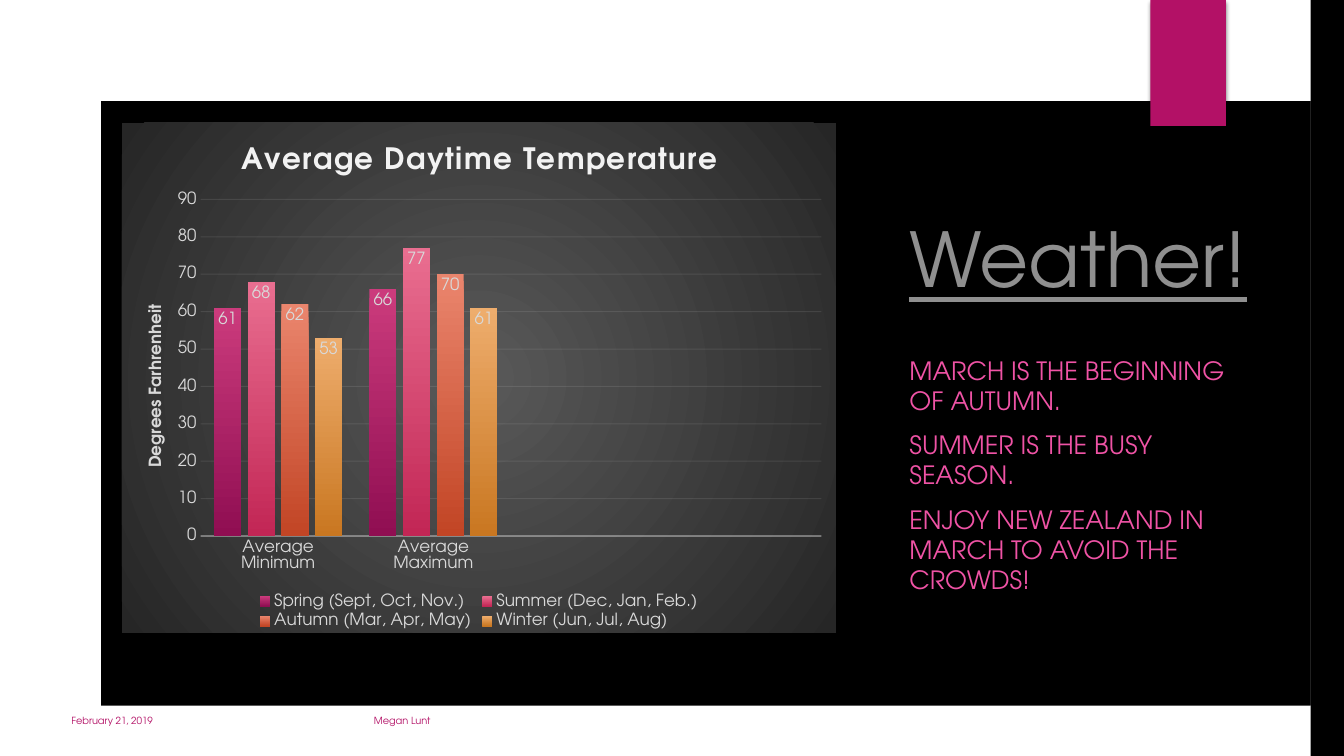
from lxml.etree import SubElement
from pptx import Presentation
from pptx.chart.data import CategoryChartData
from pptx.dml.color import RGBColor
from pptx.enum.chart import XL_CHART_TYPE, XL_LABEL_POSITION, XL_LEGEND_POSITION, XL_TICK_MARK
from pptx.enum.shapes import MSO_SHAPE
from pptx.enum.text import MSO_ANCHOR, MSO_AUTO_SIZE, PP_ALIGN
from pptx.oxml import parse_xml
from pptx.oxml.ns import nsdecls, qn
from pptx.util import Inches, Pt

FONT = "TeX Gyre Adventor"
COLORS = {
    "background": "000000", "frame": "FFFFFF", "accent": "B31166",
    "title": "8F8F8F", "body": "EF53A5", "chart_title": "F2F2F2",
    "label": "D9D9D9", "line": "F2F2F2", "center": "595959", "edge": "262626",
}


def write(paragraph, text, size, color, bold=False, underline=False, spacing=0):
    run = paragraph.add_run()
    run.text = text
    font = run.font
    font.name, font.size, font.bold, font.underline = FONT, Pt(size), bold, underline
    font.color.rgb = RGBColor.from_string(COLORS[color])
    if spacing:
        run._r.get_or_add_rPr().set("spc", str(spacing * 100))


def set_layout(element, **settings):
    """Place a chart part by fractions of the chart area."""
    for old_layout in element.findall(qn("c:layout")):
        element.remove(old_layout)
    layout = parse_xml(f'<c:layout {nsdecls("c")}><c:manualLayout/></c:layout>')
    for name, value in settings.items():
        SubElement(layout[0], qn(f"c:{name}")).set("val", str(value))
    element.insert(0 if element.find(qn("c:tx")) is None else 1, layout)


presentation = Presentation()
presentation.slide_width, presentation.slide_height = Inches(13.33), Inches(7.5)
slide = presentation.slides.add_slide(presentation.slide_layouts[0])
slide.background.fill.solid()
slide.background.fill.fore_color.rgb = RGBColor.from_string(COLORS["background"])

# White frame around the black area
builder = slide.shapes.build_freeform(0, 0, scale=Inches(1))
builder.add_line_segments([(0, 7.5), (13.33, 7.5), (13.33, 0)])
builder.move_to(12.81, 6.98)
builder.add_line_segments([(12.81, 0.52), (0.52, 0.52), (0.52, 6.98)][::-1])
frame = builder.convert_to_shape()

# Accent tab at the top
tab = slide.shapes.add_shape(MSO_SHAPE.RECTANGLE, Inches(11.41), 0, Inches(0.75), Inches(1.25))
for shape, color in ((frame, "frame"), (tab, "accent")):
    shape.shadow.inherit = False
    shape.fill.solid()
    shape.fill.fore_color.rgb = RGBColor.from_string(COLORS[color])
    shape.line.fill.background()
tab_effects = tab._element.spPr.find(qn("a:effectLst"))
tab_effects.append(parse_xml(
    f'<a:outerShdw {nsdecls("a")} blurRad="{Pt(3)}" dist="{Pt(2)}" dir="5400000" rotWithShape="0">'
    '<a:srgbClr val="000000"><a:alpha val="45000"/></a:srgbClr></a:outerShdw>'))

# Title and body text
title, body = slide.shapes.title, slide.placeholders[1]
for shape, top, height, anchor in ((title, 1.22, 1.83, MSO_ANCHOR.BOTTOM),
                                   (body, 3.47, 2.81, MSO_ANCHOR.TOP)):
    shape.left, shape.top = Inches(8.92), Inches(top)
    shape.width, shape.height = Inches(3.7), Inches(height)
    shape.text_frame.word_wrap = True
    shape.text_frame.auto_size = MSO_AUTO_SIZE.NONE
    shape.text_frame.vertical_anchor = anchor
title.text_frame.paragraphs[0].alignment = PP_ALIGN.LEFT
write(title.text_frame.paragraphs[0], "Weather!", size=54, color="title", underline=True)

facts = ["MARCH IS THE BEGINNING OF AUTUMN.",
         "SUMMER IS THE BUSY SEASON.",
         "ENJOY NEW ZEALAND IN MARCH TO AVOID THE CROWDS!"]
for index, fact in enumerate(facts):
    paragraph = body.text_frame.add_paragraph() if index else body.text_frame.paragraphs[0]
    paragraph.alignment = PP_ALIGN.LEFT
    paragraph.space_before = Pt(10 if index else 0)
    write(paragraph, fact, size=18, color="body")

# Footer with date and author
footer = slide.shapes.add_textbox(Inches(0.61), Inches(6.99), Inches(4.22), Inches(0.33))
footer.text_frame.word_wrap = True
footer.text_frame.vertical_anchor = MSO_ANCHOR.MIDDLE
paragraph = footer.text_frame.paragraphs[0]
tab_list = SubElement(paragraph._p.get_or_add_pPr(), qn("a:tabLst"))
SubElement(tab_list, qn("a:tab"), pos=str(Inches(3)), algn="l")
paragraph.line_spacing = 0.9
write(paragraph, "February 21, 2019\tMegan Lunt", size=7, color="accent")

# Temperature chart: name, values, gradient from top to bottom
seasons = [
    ("Spring (Sept, Oct, Nov.)", (61, 66), ("CB3B7C", "900E52")),
    ("Summer (Dec, Jan, Feb.)", (68, 77), ("E96E90", "C22655")),
    ("Autumn (Mar, Apr, May)", (62, 70), ("EA856D", "C24525")),
    ("Winter (Jun, Jul, Aug)", (53, 61), ("EEAD6D", "C97721")),
]
chart_data = CategoryChartData()
chart_data.categories = ["Average Minimum", "Average Maximum", "", ""]
for name, values, _ in seasons:
    chart_data.add_series(name, (*values, None, None))
chart = slide.shapes.add_chart(XL_CHART_TYPE.COLUMN_CLUSTERED, Inches(1.21), Inches(1.22),
                               Inches(7.08), Inches(5.06), chart_data).chart
chart.font.name, chart.font.size = FONT, Pt(12)
chart.font.color.rgb = RGBColor.from_string(COLORS["label"])
chart.element.find(qn("c:chart")).addnext(parse_xml(
    f'<c:spPr {nsdecls("c", "a")}><a:gradFill><a:gsLst>'
    f'<a:gs pos="0"><a:srgbClr val="{COLORS["center"]}"/></a:gs>'
    f'<a:gs pos="100000"><a:srgbClr val="{COLORS["edge"]}"/></a:gs></a:gsLst>'
    '<a:path path="circle"><a:fillToRect l="50000" t="50000" r="50000" b="50000"/></a:path>'
    '</a:gradFill><a:ln><a:noFill/></a:ln></c:spPr>'))

# Columns and value labels
plot = chart.plots[0]
plot.gap_width, plot.overlap, plot.vary_by_categories = 100, -24, False
for series, (_, _, gradient) in zip(plot.series, seasons):
    fill = series.format.fill
    fill.gradient()
    fill.gradient_angle = 270
    for stop, color in zip(fill.gradient_stops, gradient):
        stop.color.rgb = RGBColor.from_string(color)
    labels = series.data_labels
    labels.show_value = True
    labels.position = XL_LABEL_POSITION.INSIDE_END
    labels.font.name, labels.font.size = FONT, Pt(12)
    labels.font.color.rgb = RGBColor.from_string(COLORS["label"])

# Axes and gridlines
category_axis, value_axis = chart.category_axis, chart.value_axis
for axis in (category_axis, value_axis):
    axis.major_tick_mark = axis.minor_tick_mark = XL_TICK_MARK.NONE
value_axis.minimum_scale, value_axis.maximum_scale, value_axis.major_unit = 0, 90, 10
value_axis.format.line.fill.background()
for line, width, opacity in ((category_axis.format.line, 1, 54),
                             (value_axis.major_gridlines.format.line, 0.75, 10)):
    line.width = Pt(width)
    line.color.rgb = RGBColor.from_string(COLORS["line"])
    color_element = line._get_or_add_ln().find(".//" + qn("a:srgbClr"))
    SubElement(color_element, qn("a:alpha"), val=str(opacity * 1000))

# Chart titles, legend and plot area
write(chart.chart_title.text_frame.paragraphs[0], "Average Daytime Temperature",
      size=21, color="chart_title", bold=True, spacing=1)
write(value_axis.axis_title.text_frame.paragraphs[0], "Degrees Farhrenheit",
      size=12, color="label", bold=True)
value_axis.axis_title.text_frame._txBody.bodyPr.set("rot", "-5400000")
chart.has_legend = True
chart.legend.position = XL_LEGEND_POSITION.BOTTOM
chart.legend.include_in_layout = False
set_layout(chart.chart_title._element, xMode="edge", yMode="edge", x=0.16, y=0.03)
set_layout(value_axis.axis_title._element, xMode="edge", yMode="edge", x=0.03, y=0.35)
set_layout(chart.element.find(".//" + qn("c:plotArea")), layoutTarget="inner",
           xMode="edge", yMode="edge", x=0.11, y=0.15, w=0.87, h=0.66)

presentation.save("out.pptx")
